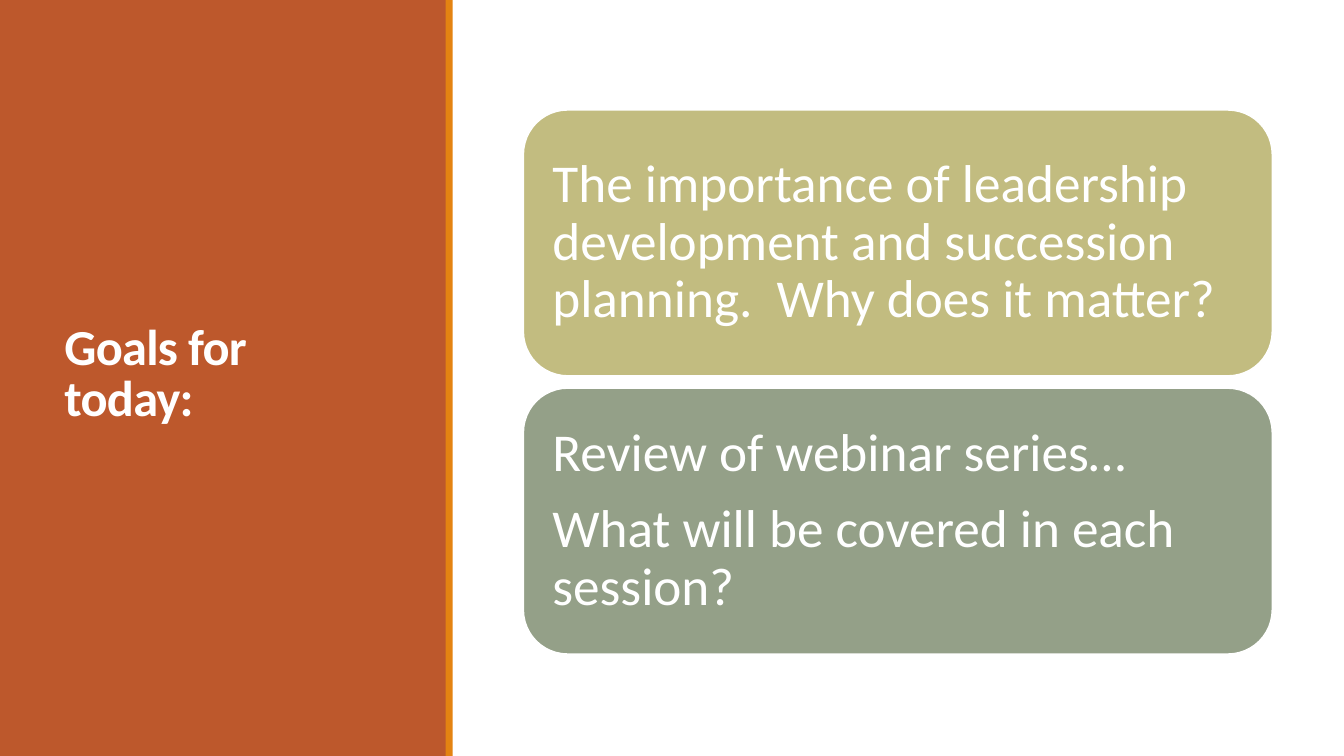
from dataclasses import dataclass

import pptx
import pptx.dml.color
import pptx.enum.shapes
import pptx.enum.text
import pptx.util
from pptx.util import Inches

SHAPES = pptx.enum.shapes.MSO_SHAPE


@dataclass(frozen=True)
class Theme:
    font: str = "Calibri"
    white: str = "FFFFFF"
    rust: str = "BD582C"
    orange: str = "E48312"
    khaki: str = "C2BC80"
    sage: str = "94A088"
    title_size: int = 36
    card_size: int = 38
    card_paragraph_gap: float = 13.6
    card_outline: float = 1.25


THEME = Theme()


def rgb(color):
    return pptx.dml.color.RGBColor.from_string(color)


def add_filled_shape(slide, kind, left, top, width, height, color):
    shape = slide.shapes.add_shape(
        kind, Inches(left), Inches(top), Inches(width), Inches(height))
    shape.shadow.inherit = False
    shape.fill.solid()
    shape.fill.fore_color.rgb = rgb(color)
    shape.line.fill.background()
    return shape


def write_text(shape, paragraphs, size, line_spacing, gap=0, bold=False, tracking=None):
    """Fill a shape with left-aligned, vertically centred white paragraphs."""
    frame = shape.text_frame
    frame.word_wrap = True
    frame.vertical_anchor = pptx.enum.text.MSO_ANCHOR.MIDDLE
    for index, text in enumerate(paragraphs):
        paragraph = frame.add_paragraph() if index else frame.paragraphs[0]
        paragraph.alignment = pptx.enum.text.PP_ALIGN.LEFT
        paragraph.line_spacing = line_spacing
        if index:
            paragraph.space_before = pptx.util.Pt(gap)
        run = paragraph.add_run()
        run.text = text
        run.font.name = THEME.font
        run.font.size = pptx.util.Pt(size)
        run.font.bold = bold
        run.font.color.rgb = rgb(THEME.white)
        if tracking is not None:
            run.font._element.set("spc", str(int(tracking * 100)))


def add_title_panel(slide, title):
    add_filled_shape(slide, SHAPES.RECTANGLE, 0, 0, 4.43, 7.5, THEME.rust)
    add_filled_shape(slide, SHAPES.RECTANGLE, 4.42, 0, 0.07, 7.5, THEME.orange)
    box = slide.shapes.add_textbox(
        Inches(0.54), Inches(0.57), Inches(3.37), Inches(6.31))
    write_text(box, [title], THEME.title_size, 0.85, bold=True, tracking=-0.5)


def add_goal_card(slide, top, color, paragraphs):
    card = add_filled_shape(
        slide, SHAPES.ROUNDED_RECTANGLE, 5.19, top, 7.43, 2.64, color)
    card.line.color.rgb = rgb(THEME.white)
    card.line.width = pptx.util.Pt(THEME.card_outline)
    frame = card.text_frame
    frame.margin_left = frame.margin_right = Inches(0.16)
    frame.margin_top = frame.margin_bottom = Inches(0.16)
    write_text(card, paragraphs, THEME.card_size, 0.9, THEME.card_paragraph_gap)


def main():
    presentation = pptx.Presentation()
    presentation.slide_width = Inches(13.33)
    presentation.slide_height = Inches(7.5)
    slide = presentation.slides.add_slide(presentation.slide_layouts[6])

    add_title_panel(slide, "Goals for today:")
    goals = [
        (THEME.khaki, ["The importance of leadership development and succession "
                       "planning.  Why does it matter?"]),
        (THEME.sage, ["Review of webinar series…",
                      "What will be covered in each session?"]),
    ]
    for index, (color, paragraphs) in enumerate(goals):
        add_goal_card(slide, 1.09 + index * 2.76, color, paragraphs)

    presentation.save("out.pptx")


if __name__ == "__main__":
    main()
